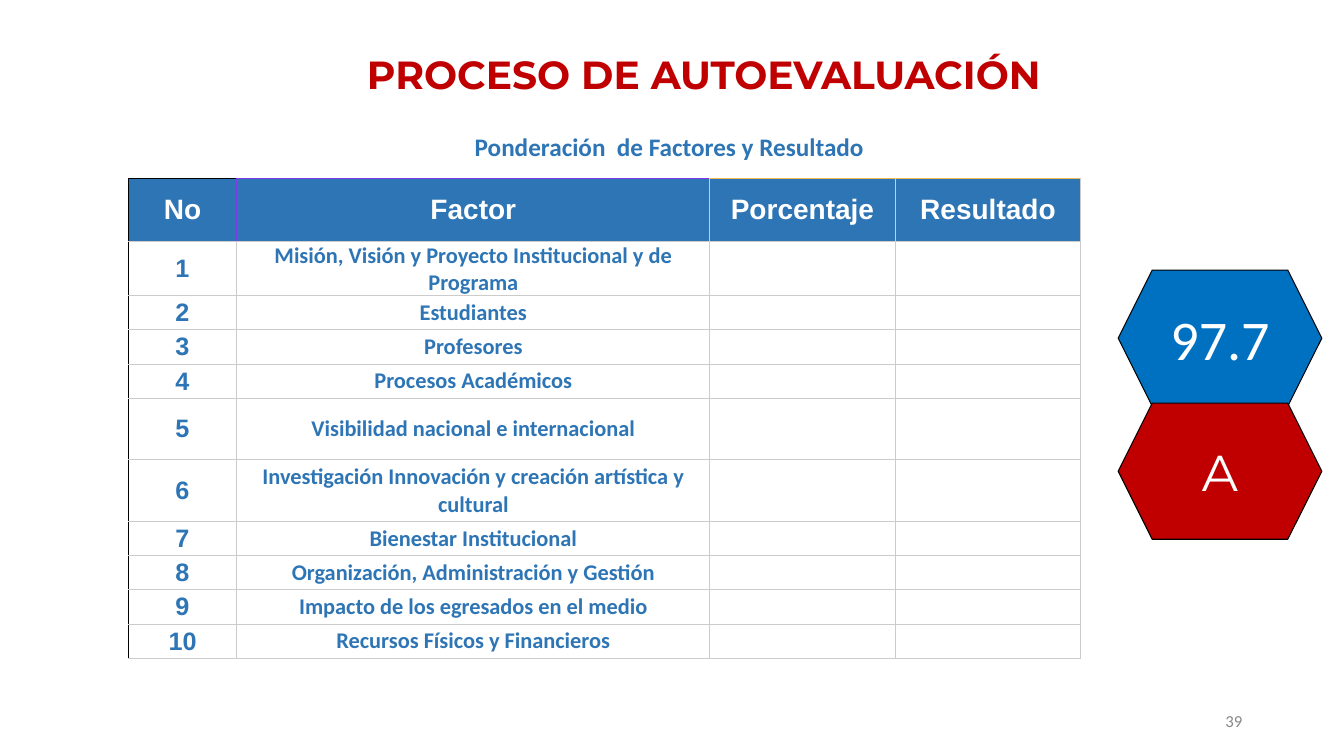
from pptx import Presentation
from pptx.dml.color import RGBColor
from pptx.enum.shapes import MSO_SHAPE
from pptx.enum.text import MSO_ANCHOR, PP_ALIGN
from pptx.oxml import parse_xml
from pptx.oxml.ns import nsdecls
from pptx.util import Inches, Pt

COLORS = {
    "red": "C00000", "blue": "2E75B5", "bright_blue": "0070C0",
    "white": "FFFFFF", "black": "000000", "gray": "888888",
    "grid": "CCCCCC", "purple": "803AE4", "orange": "F0B64B",
}
HEADERS = ["No", "Factor", "Porcentaje", "Resultado"]
FACTORS = [
    "Misión, Visión y Proyecto Institucional y de Programa",
    "Estudiantes",
    "Profesores",
    "Procesos Académicos",
    "Visibilidad nacional e internacional",
    "Investigación Innovación y creación artística y cultural",
    "Bienestar Institucional",
    "Organización, Administración y Gestión",
    "Impacto de los egresados en el medio",
    "Recursos Físicos y Financieros",
]
COLUMN_WIDTHS = [1.08, 4.69, 1.84, 1.84]
HEADER_HEIGHT, ROW_HEIGHT, TALL_HEIGHT = 0.63, 0.34, 0.61
TALL_ROWS = (5, 6)


def color(name):
    return RGBColor.from_string(COLORS[name])


def write(frame, text, size, tint, font="Calibri", bold=False,
          align=PP_ALIGN.CENTER, spacing=None):
    para = frame.paragraphs[0]
    para.alignment = align
    if spacing:
        para.line_spacing = spacing
    span = para.add_run()
    span.text = text
    span.font.name = font
    span.font.size = Pt(size)
    span.font.bold = bold
    span.font.color.rgb = color(tint)


def add_text(page, box, text, size, tint, anchor=MSO_ANCHOR.MIDDLE, **options):
    frame = page.shapes.add_textbox(*map(Inches, box)).text_frame
    frame.word_wrap = True
    frame.vertical_anchor = anchor
    write(frame, text, size, tint, **options)


def add_borders(cell, left, right, top, bottom):
    properties = cell._tc.get_or_add_tcPr()
    for side, name in zip("LRTB", (left, right, top, bottom)):
        properties.append(parse_xml(
            f'<a:ln{side} {nsdecls("a")} w="{Pt(0.75)}"><a:solidFill>'
            f'<a:srgbClr val="{COLORS[name]}"/></a:solidFill></a:ln{side}>'))


def border_colors(row, column):
    left = "black" if column == 0 else "grid"
    if row > 0:
        return left, "grid", "grid", "grid"
    top = ("black", "purple", "orange", "orange")[column]
    if column == 1:
        left = "purple"
    right = "purple" if column == 0 else "grid"
    return left, right, top, "grid"


def format_cell(cell, row, column):
    cell.margin_left = cell.margin_right = Inches(0.03)
    cell.margin_top = cell.margin_bottom = 0
    cell.vertical_anchor = MSO_ANCHOR.MIDDLE
    add_borders(cell, *border_colors(row, column))
    if row == 0:
        cell.fill.solid()
        cell.fill.fore_color.rgb = color("blue")
    else:
        cell.fill.background()


def add_factor_table(page, left, top):
    heights = [HEADER_HEIGHT] + [
        TALL_HEIGHT if number in TALL_ROWS else ROW_HEIGHT
        for number in range(1, len(FACTORS) + 1)]
    table = page.shapes.add_table(
        len(heights), len(HEADERS), Inches(left), Inches(top),
        Inches(sum(COLUMN_WIDTHS)), Inches(sum(heights))).table
    table.horz_banding = False
    for column, width in zip(table.columns, COLUMN_WIDTHS):
        column.width = Inches(width)
    for row, height in zip(table.rows, heights):
        row.height = Inches(height)
    for row in range(len(heights)):
        for column in range(len(HEADERS)):
            format_cell(table.cell(row, column), row, column)
    for column, header in enumerate(HEADERS):
        write(table.cell(0, column).text_frame, header, 20, "white",
              font="Arial", bold=True)
    for number, factor in enumerate(FACTORS, 1):
        write(table.cell(number, 0).text_frame, str(number), 18, "blue",
              font="Arial", bold=True)
        write(table.cell(number, 1).text_frame, factor, 16, "blue", bold=True)


def add_score(page, box, text, size, fill, font):
    hexagon = page.shapes.add_shape(MSO_SHAPE.HEXAGON, *map(Inches, box))
    hexagon.shadow.inherit = False
    hexagon.fill.solid()
    hexagon.fill.fore_color.rgb = color(fill)
    hexagon.line.color.rgb = color("black")
    hexagon.line.width = Pt(0.75)
    hexagon.text_frame.vertical_anchor = MSO_ANCHOR.MIDDLE
    write(hexagon.text_frame, text, size, "white", font=font)


def add_scores(page, left, top):
    scores = [("97.7", 40, "bright_blue", "Calibri"),
              ("A", 36, "red", "Montserrat")]
    for index, score in enumerate(scores):
        add_score(page, (left, top + index * 1.32, 2.02, 1.35), *score)


def main():
    deck = Presentation()
    deck.slide_width, deck.slide_height = Inches(13.33), Inches(7.5)
    page = deck.slides.add_slide(deck.slide_layouts[6])
    add_text(page, (0.98, 0.14, 12, 1.25), "PROCESO DE AUTOEVALUACIÓN", 28,
             "red", font="Montserrat", bold=True, spacing=0.9)
    add_text(page, (4.61, 1.25, 4.09, 0.4),
             "Ponderación  de Factores y Resultado", 18, "blue",
             anchor=MSO_ANCHOR.TOP, bold=True, align=PP_ALIGN.LEFT)
    add_factor_table(page, 1.27, 1.77)
    add_text(page, (9.42, 6.95, 3, 0.4), "39", 12, "gray",
             align=PP_ALIGN.RIGHT)
    add_scores(page, 11.09, 2.68)
    deck.save("out.pptx")


if __name__ == "__main__":
    main()
